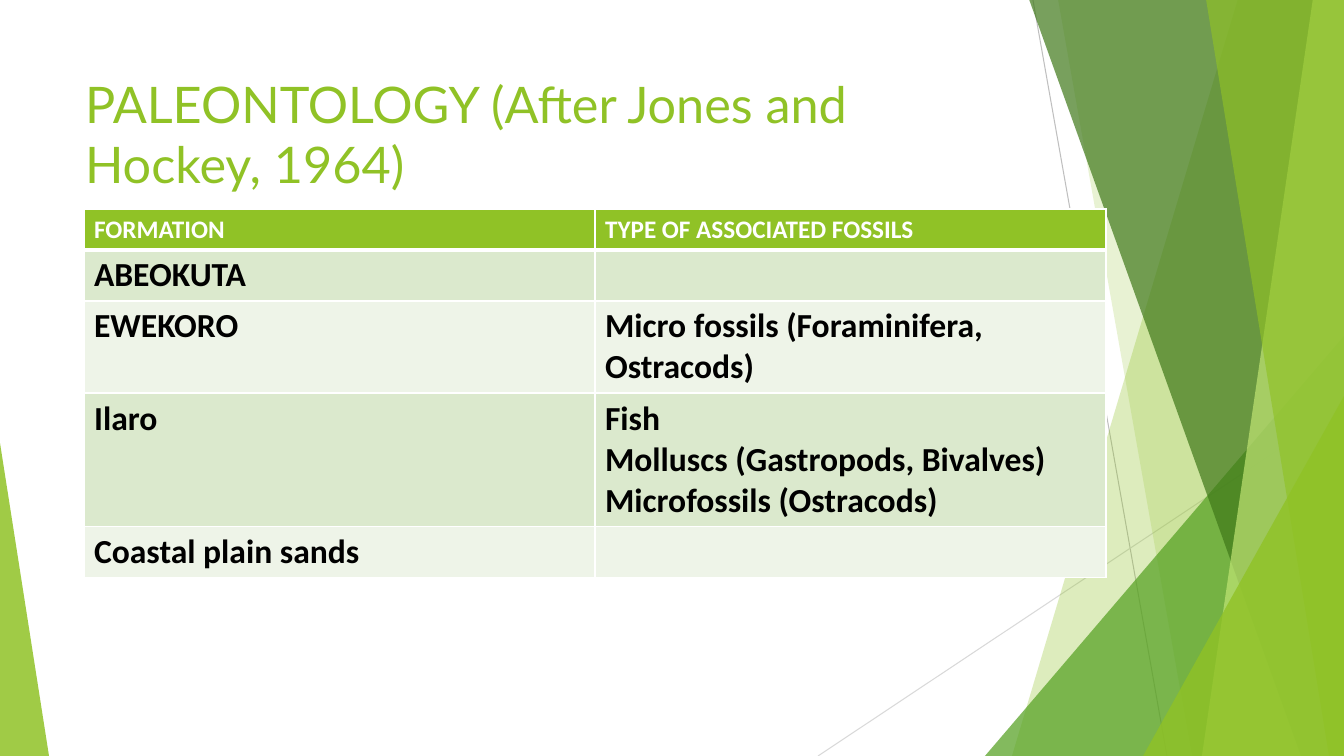
from lxml.etree import SubElement
from pptx import Presentation
from pptx.dml.color import RGBColor
from pptx.enum.shapes import MSO_CONNECTOR, MSO_SHAPE
from pptx.enum.text import MSO_ANCHOR, PP_ALIGN
from pptx.oxml.ns import qn
from pptx.util import Emu, Pt

EMU_PER_PX = 914400 / 100.8
WIDTH, HEIGHT = 1344, 756
COLOURS = {
    "green": "90C226", "leaf": "54A021", "forest": "3F7819", "lime": "C0E474",
    "grey": "BFBFBF", "pale grey": "D9D9D9", "white": "FFFFFF", "black": "000000",
    "band": "DBE9CD", "pale band": "EEF4E8",
}


def px(length):
    return Emu(round(length * EMU_PER_PX))


def rgb(colour):
    return RGBColor.from_string(COLOURS[colour])


def write(frame, text, *, size, font, colour, bold=False):
    """Fill a text frame, one paragraph for each line of text."""
    for index, line in enumerate(text.split("\n")):
        para = frame.paragraphs[0] if index == 0 else frame.add_paragraph()
        para.alignment = PP_ALIGN.LEFT
        span = para.add_run()
        span.text = line
        span.font.size, span.font.name, span.font.bold = Pt(size), font, bold
        span.font.color.rgb = rgb(colour)


class SlideBuilder:
    title_font = "Lato"
    table_font = "Calibri"

    def __init__(self, slide):
        self.slide = slide
        self.shapes = slide.shapes

    def line(self, start, end, colour):
        line = self.shapes.add_connector(
            MSO_CONNECTOR.STRAIGHT, *map(px, start + end))
        line.line.color.rgb = rgb(colour)
        line.line.width = Pt(0.75)
        SubElement(line._element.spPr, qn("a:effectLst"))

    def paint(self, shape, colour, opacity):
        shape.shadow.inherit = False
        shape.line.fill.background()
        shape.fill.solid()
        shape.fill.fore_color.rgb = rgb(colour)
        tint = shape._element.spPr.find(qn("a:solidFill"))[0]
        SubElement(tint, qn("a:alpha"), val=str(opacity * 1000))

    def band(self, top_left, bottom_left, colour, opacity):
        """Draw a slanted band that reaches the right edge of the slide."""
        outline = self.shapes.build_freeform(top_left, -1, scale=EMU_PER_PX)
        outline.add_line_segments(
            [(WIDTH, -1), (WIDTH, HEIGHT), (bottom_left, HEIGHT)], close=True)
        self.paint(outline.convert_to_shape(), colour, opacity)

    def triangle(self, left, top, width, apex, colour, opacity):
        """Draw a triangle that stands on the bottom of the slide."""
        shape = self.shapes.add_shape(
            MSO_SHAPE.ISOSCELES_TRIANGLE,
            px(left), px(top), px(width), px(HEIGHT - top))
        shape.adjustments[0] = apex
        self.paint(shape, colour, opacity)

    def title(self, text, left, top, width, height):
        title = self.shapes.title
        title.left, title.top = px(left), px(top)
        title.width, title.height = px(width), px(height)
        title.text_frame.word_wrap = True
        title.text_frame.vertical_anchor = MSO_ANCHOR.TOP
        write(title.text_frame, text, size=36, font=self.title_font, colour="green")

    def borders(self, cell, widths):
        properties = cell._tc.get_or_add_tcPr()
        for side, points in widths.items():
            edge = SubElement(properties, qn(f"a:ln{side}"), w=str(Pt(points)))
            fill = SubElement(edge, qn("a:solidFill"))
            SubElement(fill, qn("a:srgbClr"), val=COLOURS["white"])

    def table(self, rows, heights, left, top, column_width):
        columns = len(rows[0])
        table = self.shapes.add_table(
            len(rows), columns, px(left), px(top),
            px(column_width * columns), px(sum(heights))).table
        for column in table.columns:
            column.width = px(column_width)
        for row_index, (texts, height) in enumerate(zip(rows, heights)):
            table.rows[row_index].height = px(height)
            header = row_index == 0
            shade = "green" if header else ("pale band", "band")[row_index % 2]
            for column_index, text in enumerate(texts):
                cell = table.cell(row_index, column_index)
                self.borders(cell, {"L": 1, "R": 1, "T": 3 if row_index == 1 else 1,
                                    "B": 3 if header else 1})
                cell.fill.solid()
                cell.fill.fore_color.rgb = rgb(shade)
                if text:
                    write(cell.text_frame, text, size=18 if header else 24,
                          font=self.table_font, bold=True,
                          colour="white" if header else "black")


def main():
    deck = Presentation()
    deck.slide_width, deck.slide_height = px(WIDTH), px(HEIGHT)
    page = SlideBuilder(deck.slides.add_slide(deck.slide_layouts[5]))

    # Decoration, back to front
    page.line((1033, 0), (1167, HEIGHT), "grey")
    page.line((WIDTH, 406), (818, HEIGHT), "pale grey")
    page.band(1238, 1012, "green", 30)
    page.band(1058, 1192, "green", 20)
    page.triangle(985, 336, 359, 1, "leaf", 72)
    page.band(1029, 1301, "forest", 70)
    page.band(1313, 1202, "lime", 70)
    page.band(1206, 1329, "green", 65)
    page.triangle(1143, 396, 201, 1, "green", 80)
    page.triangle(0, 443, 49, 0, "green", 85)

    # Title
    page.title("PALEONTOLOGY (After Jones and Hockey, 1964)", 75, 68, 948, 145)

    # Fossils by formation
    page.table(
        [
            ("FORMATION", "TYPE OF ASSOCIATED FOSSILS"),
            ("ABEOKUTA", ""),
            ("EWEKORO", "Micro fossils (Foraminifera, Ostracods)"),
            ("Ilaro", "Fish\nMolluscs (Gastropods, Bivalves)\nMicrofossils (Ostracods)"),
            ("Coastal plain sands", ""),
        ],
        heights=[40, 51, 92, 133, 51], left=84, top=209, column_width=511)

    deck.save("out.pptx")


if __name__ == "__main__":
    main()
